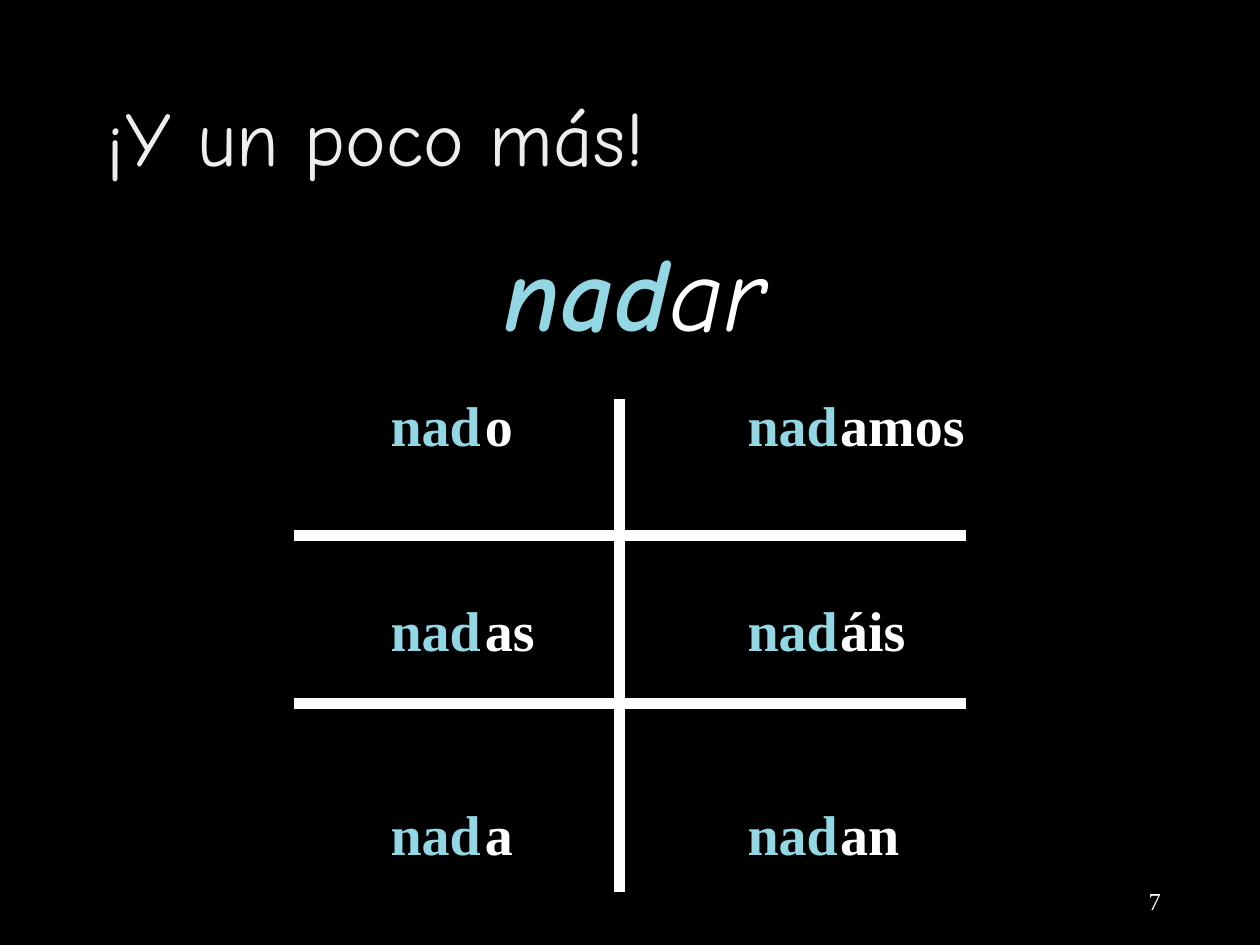
from lxml import etree
from pptx import Presentation, util as u
from pptx.dml.color import RGBColor
from pptx.enum import shapes, text

COLUMNS, ROWS = 120, 90
WHITE, STEM, TITLE = "FFFFFF", "94D7E4", "EDEDED"
SERIF, HAND = "Times New Roman", "Comic Neue"
ALIGN, ANCHOR = text.PP_ALIGN, text.MSO_ANCHOR

deck = Presentation()
deck.slide_width, deck.slide_height = u.Inches(10), u.Inches(7.5)
column = deck.slide_width / COLUMNS
row = deck.slide_height / ROWS
page = deck.slides.add_slide(deck.slide_layouts[6])


def color(value):
    return RGBColor.from_string(value)


def add_text(place, paragraphs, frame_format, para_format):
    left, top, width, height = place
    box = page.shapes.add_textbox(
        round(left * column), round(top * row), round(width * column), round(height * row)
    )
    for name, value in frame_format.items():
        setattr(box.text_frame, name, value)
    for index, spans in enumerate(paragraphs):
        para = box.text_frame.add_paragraph() if index else box.text_frame.paragraphs[0]
        for name, value in para_format.items():
            if index or name != "space_before":
                setattr(para, name, value)
        for words, shade, font_format in spans:
            span = para.add_run()
            span.text = words
            span.font.color.rgb = color(shade)
            for name, value in font_format.items():
                setattr(span.font, name, value)


page.background.fill.solid()
page.background.fill.fore_color.rgb = color("000000")

middle = {"word_wrap": True, "vertical_anchor": ANCHOR.MIDDLE}
title_font = {"name": HAND, "size": u.Pt(44)}
add_text((9, 6, 102, 15), [[("¡Y un poco más!", TITLE, title_font)]],
         middle, {"line_spacing": 0.9})
number_font = {"name": SERIF, "size": u.Pt(14)}
add_text((84.75, 83.4, 27, 4.8), [[("7", WHITE, number_font)]],
         middle, {"alignment": ALIGN.RIGHT})

verb_font = {"name": HAND, "size": u.Pt(60), "italic": True}
verb = [("nad", STEM, {**verb_font, "bold": True}), ("ar", WHITE, verb_font)]
add_text((45.9, 21, 29, 13.2), [verb], {"word_wrap": False}, {"alignment": ALIGN.CENTER})

for start, end in [((59, 38), (59, 85)), ((28, 51), (92, 51)), ((28, 67), (92, 67))]:
    rule = page.shapes.add_connector(
        shapes.MSO_CONNECTOR.STRAIGHT,
        round(start[0] * column), round(start[1] * row),
        round(end[0] * column), round(end[1] * row),
    )
    rule.line.color.rgb = color(WHITE)
    rule.line.width = u.Pt(6)
    etree.SubElement(
        rule._element.spPr, "{http://schemas.openxmlformats.org/drawingml/2006/main}effectLst"
    )

form_font = {"name": SERIF, "size": u.Pt(32), "bold": True}
form_frame = {"word_wrap": False, "margin_top": u.Inches(0.1)}
form_columns = [
    (36, 11, ["nad"] * 3, STEM, ALIGN.CENTER),
    (70, 11, ["nad"] * 3, STEM, ALIGN.CENTER),
    (45, 7.2, ["o", "as", "a"], WHITE, ALIGN.LEFT),
    (78.84, 14.3, ["amos", "áis", "an"], WHITE, ALIGN.LEFT),
]
for left, width, forms, shade, alignment in form_columns:
    add_text((left, 36, width, 46), [[(form, shade, form_font)] for form in forms],
             form_frame, {"alignment": alignment, "space_before": u.Pt(78.4)})

deck.save("out.pptx")
